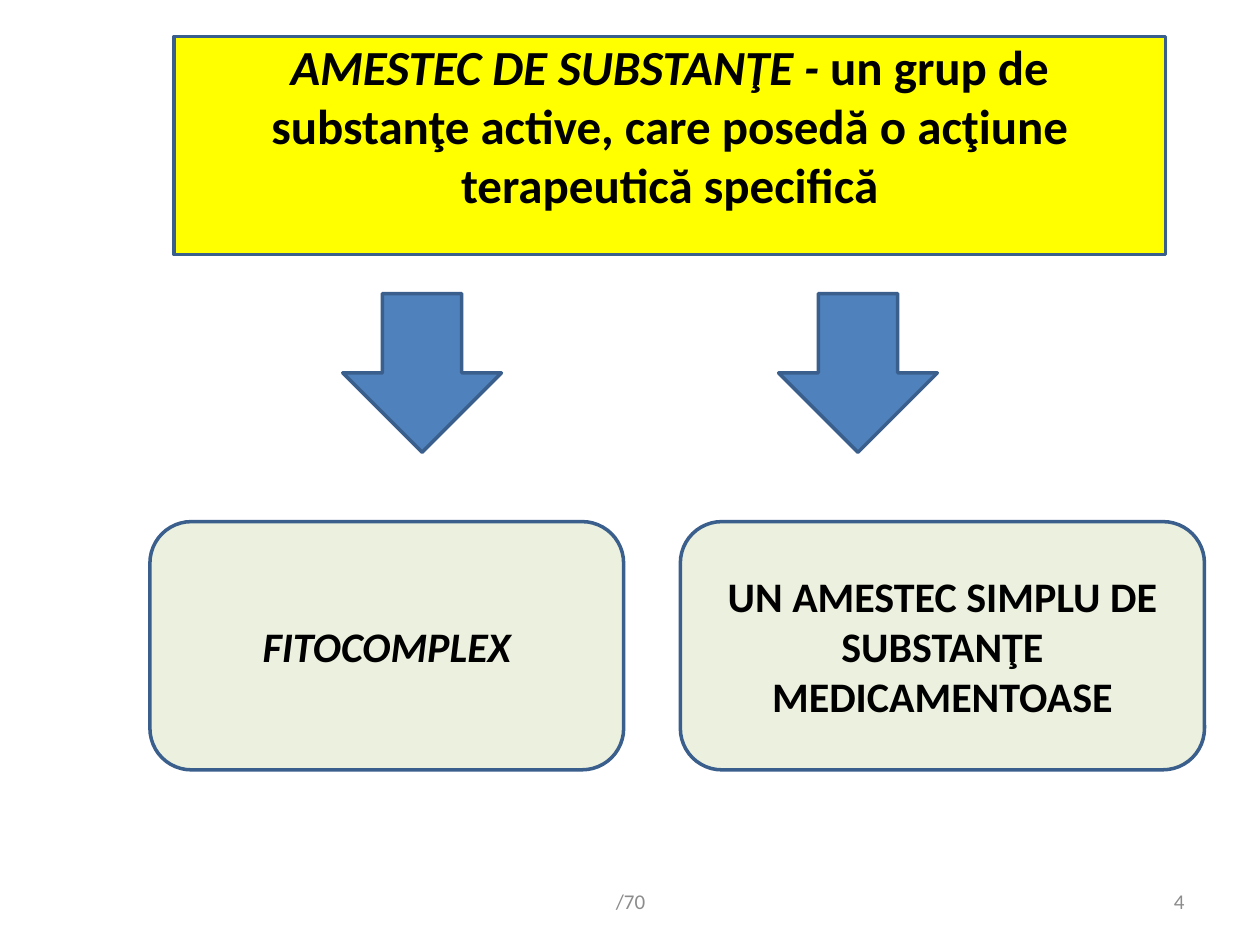
from pptx import Presentation
from pptx.dml.color import RGBColor
from pptx.enum.shapes import MSO_SHAPE
from pptx.enum.text import MSO_ANCHOR, MSO_AUTO_SIZE, PP_ALIGN
from pptx.util import Inches, Pt

ROUNDED, ARROW = MSO_SHAPE.ROUNDED_RECTANGLE, MSO_SHAPE.DOWN_ARROW
TOP, MIDDLE = MSO_ANCHOR.TOP, MSO_ANCHOR.MIDDLE
CENTER, RIGHT = PP_ALIGN.CENTER, PP_ALIGN.RIGHT
NO_FIT = MSO_AUTO_SIZE.NONE
TITLE_ONLY = 5
YELLOW, BLUE, PALE_GREEN = "FFFF00", "4F81BD", "EBF1DE"
OUTLINE, BLACK, GRAY = "3A5F8C", "000000", "8C8C8C"


def color(value):
    return RGBColor.from_string(value)


def paint(shape, fill):
    shape.fill.solid()
    shape.fill.fore_color.rgb = color(fill)
    shape.line.color.rgb = color(OUTLINE)
    shape.line.width = Pt(2)


def write(shape, spans, size, ink=BLACK, bold=True, align=CENTER, anchor=MIDDLE):
    """Fill one paragraph with (text, italic) spans."""
    frame = shape.text_frame
    frame.word_wrap = True
    frame.auto_size = NO_FIT
    frame.vertical_anchor = anchor
    para = frame.paragraphs[0]
    para.alignment = align
    for text, italic in spans:
        span = para.add_run()
        span.text = text
        font = span.font
        font.name, font.size = "Calibri", Pt(size)
        font.bold, font.italic = bold, italic
        font.color.rgb = color(ink)


def add_block(page, kind, box, fill):
    shape = page.shapes.add_shape(kind, *map(Inches, box))
    shape.shadow.inherit = False
    paint(shape, fill)
    return shape


def place_definition(page, box):
    title = page.shapes.title
    title.left, title.top, title.width, title.height = map(Inches, box)
    paint(title, YELLOW)
    write(title, [
        ("AMESTEC DE SUBSTANŢE - ", True),
        ("un grup de substanţe active, care posedă o acţiune terapeutică specifică", False),
    ], 28, anchor=TOP)
    title.text_frame.margin_top = 0


def place_kind(page, box, text, italic):
    write(add_block(page, ROUNDED, box, PALE_GREEN), [(text, italic)], 24)


def place_footer(page, box, text, align):
    footer = page.shapes.add_textbox(*map(Inches, box))
    write(footer, [(text, False)], 12, GRAY, bold=False, align=align)


def main():
    deck = Presentation()
    deck.slide_width, deck.slide_height = Inches(10), Inches(7.5)
    page = deck.slides.add_slide(deck.slide_layouts[TITLE_ONLY])

    place_definition(page, (1.38, 0.29, 7.87, 1.73))
    for left in (2.72, 6.18):
        add_block(page, ARROW, (left, 2.33, 1.26, 1.26), BLUE)
    place_kind(page, (1.19, 4.14, 3.76, 1.97), "FITOCOMPLEX", True)
    place_kind(page, (5.4, 4.14, 4.16, 1.97),
               "UN AMESTEC SIMPLU DE SUBSTANŢE MEDICAMENTOASE", False)
    place_footer(page, (3.42, 6.95, 3.17, 0.4), "/70", CENTER)
    place_footer(page, (7.17, 6.95, 2.33, 0.4), "4", RIGHT)

    deck.save("out.pptx")


if __name__ == "__main__":
    main()
